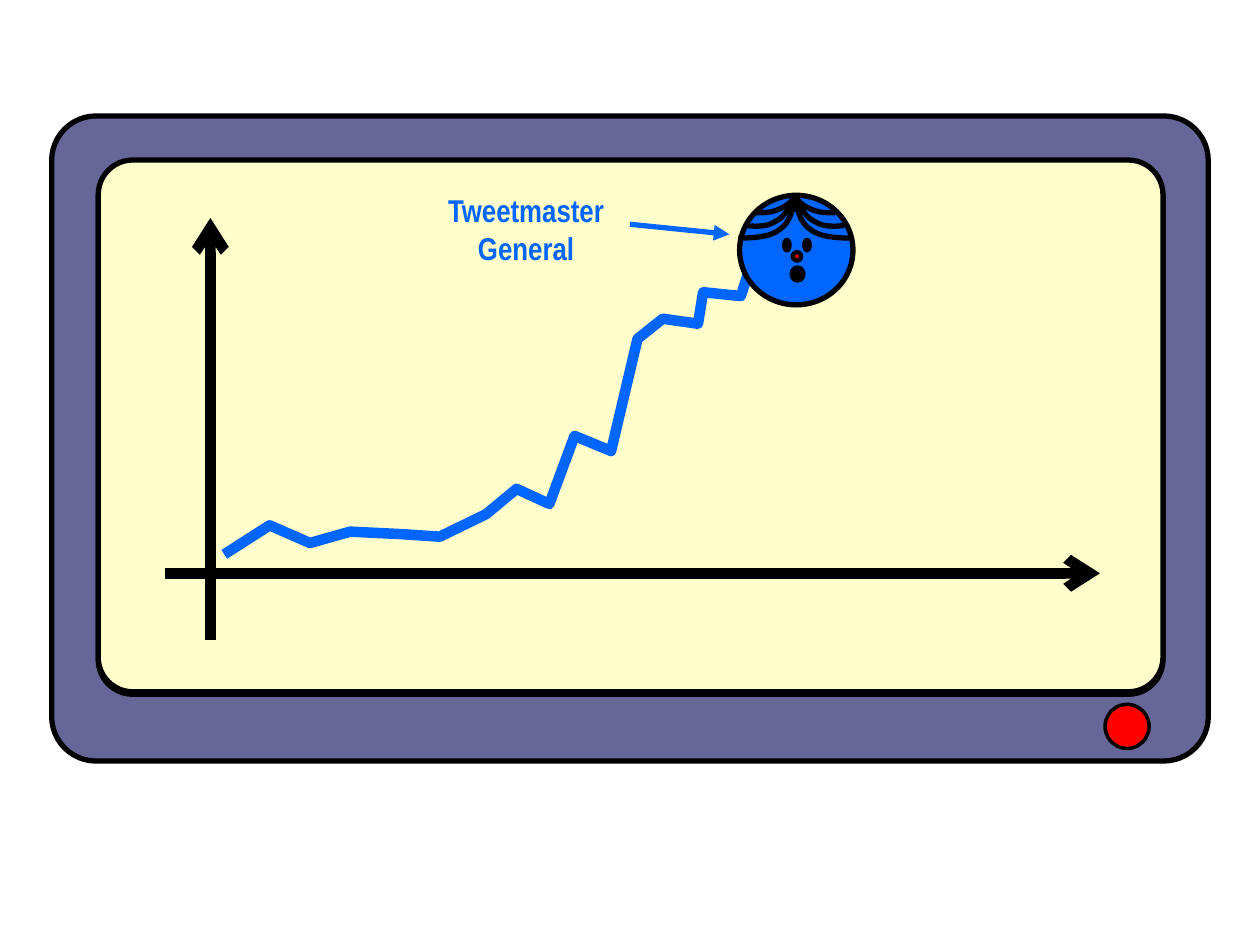
from lxml import etree
from pptx import Presentation
from pptx.dml.color import RGBColor
from pptx.enum.shapes import MSO_CONNECTOR, MSO_SHAPE
from pptx.enum.text import PP_ALIGN
from pptx.oxml.ns import qn
from pptx.util import Inches, Pt

ROUND = MSO_SHAPE.ROUNDED_RECTANGLE
OVAL = MSO_SHAPE.OVAL
STRAIGHT = MSO_CONNECTOR.STRAIGHT
CENTER = PP_ALIGN.CENTER

HUES = {"black": "000000", "frame": "666699", "shade": "1E1C11", "red": "FF0000",
        "screen": "FFFFCC", "blue": "0066FF", "nose": "C00000"}

LABEL = "Tweetmaster General"
FONT = "Arial Narrow"

MONITOR = [
    (ROUND, (0.41, 0.92, 9.18, 5.12), "frame", 3, 0.069),
    (ROUND, (0.78, 1.29, 8.45, 4.22), "shade", 3, 0.065),
    (OVAL, (8.77, 5.59, 0.35, 0.35), "red", 2, None),
    (ROUND, (0.78, 1.27, 8.45, 4.22), "screen", 3, 0.065),
]
AXES = [((1.67, 5.08), (1.67, 1.73)), ((1.31, 4.55), (8.73, 4.55))]
TREND = [(1.78, 4.4), (2.14, 4.17), (2.46, 4.31), (2.78, 4.22), (3.19, 4.24),
         (3.49, 4.26), (3.86, 4.08), (4.1, 3.88), (4.36, 4), (4.56, 3.46),
         (4.85, 3.58), (5.06, 2.69), (5.26, 2.53), (5.54, 2.57), (5.58, 2.32),
         (5.88, 2.35), (5.96, 2.1), (6.33, 2)]
HEAD = (OVAL, (5.87, 1.55, 0.9, 0.87), "blue", 3, None)
PART = (6.31, 1.56)
HAIR = [
    [(0, 0), (0.01, 0.09), (0.04, 0.21), (0.12, 0.26), (0.19, 0.32), (0.32, 0.33), (0.45, 0.33)],
    [(0, 0), (0.05, 0.1), (0.09, 0.17), (0.16, 0.2), (0.22, 0.24), (0.31, 0.24), (0.39, 0.23)],
    [(0, 0), (0.03, 0.05), (0.09, 0.09), (0.15, 0.11), (0.2, 0.13), (0.27, 0.13), (0.32, 0.13)],
]
FACE = [
    (OVAL, (6.22, 1.9, 0.05, 0.09), "black", 2, None),
    (OVAL, (6.29, 2, 0.07, 0.07), "nose", 2.25, None),
    (OVAL, (6.38, 1.9, 0.05, 0.09), "black", 2, None),
    (OVAL, (6.28, 2.12, 0.1, 0.11), "black", 2, None),
]

deck = Presentation()
deck.slide_width, deck.slide_height = Inches(10), Inches(7.5)
slide = deck.slides.add_slide(deck.slide_layouts[6])
shapes = slide.shapes


def color(name):
    return RGBColor.from_string(HUES[name])


def stroke(item, hue, width):
    item.line.color.rgb = color(hue)
    item.line.width = Pt(width)


def solid(kind, box, hue, width, bend):
    item = shapes.add_shape(kind, *map(Inches, box))
    item.shadow.inherit = False
    item.fill.solid()
    item.fill.fore_color.rgb = color(hue)
    stroke(item, "black", width)
    if bend:
        item.adjustments[0] = bend


def trace(points, hue, width):
    dots = [(Inches(x), Inches(y)) for x, y in points]
    pen = shapes.build_freeform(*dots[0])
    pen.add_line_segments(dots[1:], close=False)
    item = pen.convert_to_shape()
    item.shadow.inherit = False
    item.fill.background()
    stroke(item, hue, width)
    return item


def bow(item):
    route = item._element.find(".//" + qn("a:path"))
    legs = route.findall(qn("a:lnTo"))
    for i in range(0, len(legs), 3):
        arc = etree.SubElement(route, qn("a:cubicBezTo"))
        for leg in legs[i:i + 3]:
            arc.append(leg[0])
            route.remove(leg)


def arrow(start, end, hue, width, tip):
    item = shapes.add_connector(STRAIGHT, *map(Inches, start + end))
    stroke(item, hue, width)
    etree.SubElement(item.line._get_or_add_ln(), qn("a:tailEnd"), type=tip)
    etree.SubElement(item._element.spPr, qn("a:effectLst"))


for piece in MONITOR:
    solid(*piece)
for start, end in AXES:
    arrow(start, end, "black", 6, "arrow")
trace(TREND, "blue", 6)

solid(*HEAD)
for side in (-1, 1):
    for lock in HAIR:
        bow(trace([(PART[0] + side * x, PART[1] + y) for x, y in lock], "black", 3))
for piece in FACE:
    solid(*piece)

box = shapes.add_textbox(*map(Inches, (3.35, 1.47, 1.65, 0.71)))
frame = box.text_frame
frame.word_wrap = True
line = frame.paragraphs[0]
line.alignment = CENTER
run = line.add_run()
run.text = LABEL
run.font.name, run.font.size, run.font.bold = FONT, Pt(18), True
run.font.color.rgb = color("blue")
arrow((5, 1.78), (5.79, 1.86), "blue", 3, "triangle")

deck.save("out.pptx")
